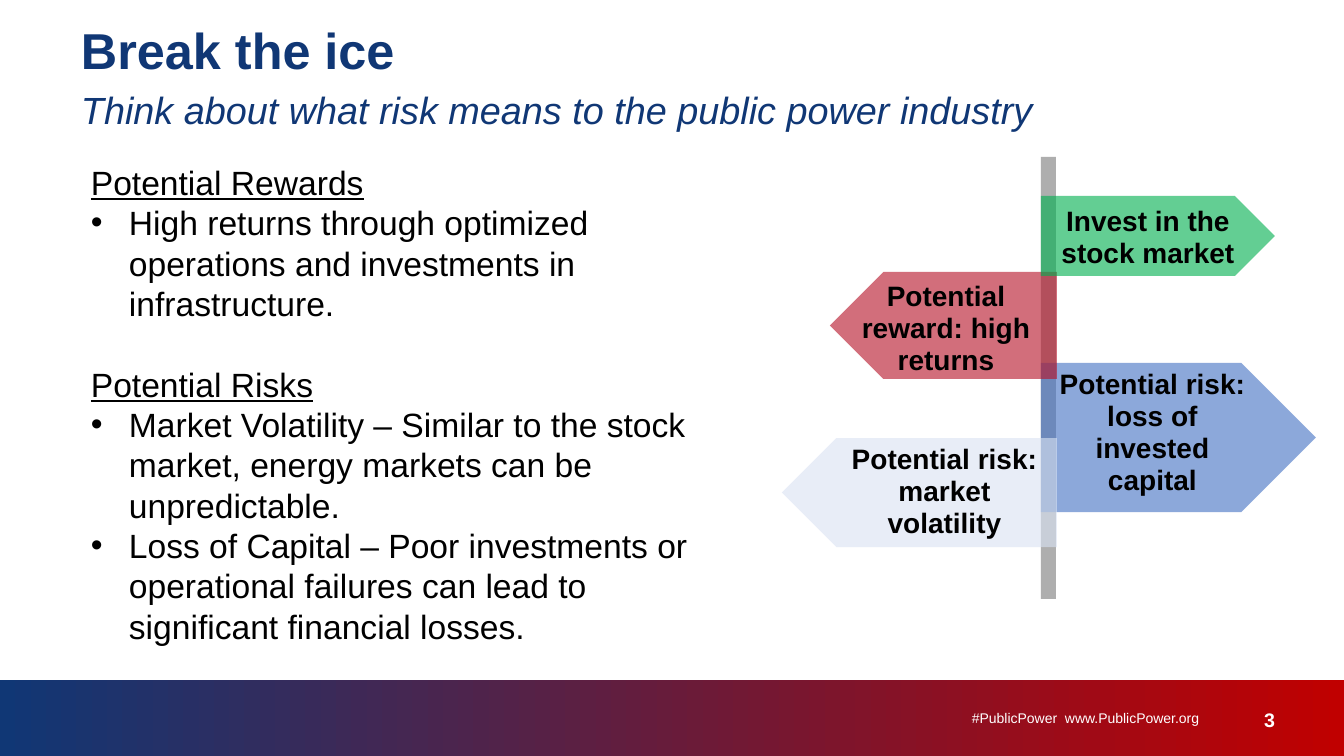
from lxml import etree
from pptx import Presentation
from pptx.dml.color import RGBColor
from pptx.enum.shapes import MSO_SHAPE
from pptx.enum.text import PP_ALIGN
from pptx.oxml.ns import qn
from pptx.util import Pt

RECT, PLATE = MSO_SHAPE.RECTANGLE, MSO_SHAPE.PENTAGON
LEFT, CENTER, RIGHT = PP_ALIGN.LEFT, PP_ALIGN.CENTER, PP_ALIGN.RIGHT

PX = 12192000 / 1344  # EMU in one px
THEME = {
    "font": "Arial",
    "navy": "103775", "red": "C00000", "white": "FFFFFF", "black": "000000",
    "pole": "7C7C7C", "blue_sign": "4472C4", "red_sign": "B71328",
    "pale_sign": "DAE3F3", "green_sign": "00B050", "sign_alpha": 61,
    "title": 36, "subtitle": 27, "body": 24, "sign": 20, "number": 14, "footer": 10,
}


def add_box(shapes, box, lines, align=LEFT, inset=True):
    """Add a text box; each line is a list of (text, size, colour, font flags)."""
    tf = shapes.add_textbox(*[round(v * PX) for v in box]).text_frame
    tf.word_wrap = True
    if not inset:
        tf.margin_left = tf.margin_right = tf.margin_top = tf.margin_bottom = 0
    for i, runs in enumerate(lines):
        p = tf.paragraphs[0] if i == 0 else tf.add_paragraph()
        p.alignment = align
        for j, (text, size, colour, flags) in enumerate(runs):
            if j:
                p.add_line_break()
            r = p.add_run()
            r.text = text
            r.font.color.rgb = RGBColor.from_string(THEME[colour])
            formats = {"name": THEME["font"], "size": Pt(THEME[size]), **flags}
            for name, value in formats.items():
                setattr(r.font, name, value)
    return tf


def add_panel(shapes, kind, box, colour):
    """Add a borderless, translucent shape."""
    sp = shapes.add_shape(kind, *[round(v * PX) for v in box])
    sp.shadow.inherit = False
    sp.line.fill.background()
    sp.fill.solid()
    sp.fill.fore_color.rgb = RGBColor.from_string(THEME[colour])
    clr = sp.fill._xPr.find(qn("a:solidFill"))[0]
    etree.SubElement(clr, qn("a:alpha"), val=str(THEME["sign_alpha"] * 1000))
    return sp


prs = Presentation()
prs.slide_width, prs.slide_height = round(1344 * PX), round(756 * PX)
s = prs.slides.add_slide(prs.slide_layouts[6])

# Footer band
band = s.shapes.add_shape(RECT, 0, round(680 * PX), prs.slide_width, round(78 * PX))
band.shadow.inherit = False
band.line.fill.background()
band.fill.gradient()
band.fill.gradient_angle = 0
for stop, colour in zip(band.fill.gradient_stops, ("navy", "red")):
    stop.color.rgb = RGBColor.from_string(THEME[colour])
add_box(s.shapes, (924, 710, 275, 17),
        [[("#PublicPower  www.PublicPower.org", "footer", "white", {})]], RIGHT, False)
add_box(s.shapes, (1222, 708, 53, 33), [[("3", "number", "white", {"bold": True})]], RIGHT, False)

# Title and subtitle
tf = add_box(s.shapes, (81, 26, 1185, 113), [[
    ("Break the ice", "title", "navy", {"bold": True}),
    ("Think about what risk means to the public power industry", "subtitle", "navy",
     {"italic": True}),
]], inset=False)
tf.paragraphs[0].line_spacing = Pt(38)

# Rewards and risks
SECTIONS = {
    "Potential Rewards": [
        "High returns through optimized operations and investments in infrastructure.",
    ],
    "Potential Risks": [
        "Market Volatility – Similar to the stock market, energy markets can be unpredictable.",
        "Loss of Capital – Poor investments or operational failures can lead to "
        "significant financial losses.",
    ],
}
lines = []
for heading, points in SECTIONS.items():
    lines.append([(heading, "body", "black", {"underline": True})])
    lines += [[(point, "body", "black", {})] for point in points]
tf = add_box(s.shapes, (81, 157, 652, 499), lines)
for i, p in enumerate(tf.paragraphs):
    if p.text not in SECTIONS:
        pPr = p._p.get_or_add_pPr()
        pPr.set("marL", str(round(38 * PX)))
        pPr.set("indent", str(round(-38 * PX)))
        etree.SubElement(pPr, qn("a:buFont"), typeface=THEME["font"])
        etree.SubElement(pPr, qn("a:buChar"), char="•")
    elif i:
        p.space_before = Pt(28.8)

# Signpost: plate box, colour, points left, label box, label
SIGNS = [
    ((1041, 363, 275, 149), "blue_sign", False, (1040, 364, 225, 139),
     "Potential risk: loss of invested capital"),
    ((830, 272, 227, 107), "red_sign", True, (851, 276, 190, 107),
     "Potential reward: high returns"),
    ((782, 438, 275, 109), "pale_sign", True, (834, 439, 221, 107),
     "Potential risk: market volatility"),
    ((1041, 196, 234, 80), "green_sign", False, (1040, 201, 216, 75),
     "Invest in the stock market"),
]
signpost = s.shapes.add_group_shape().shapes
add_panel(signpost, RECT, (1041, 157, 15, 442), "pole")
for plate_box, colour, points_left, label_box, label in SIGNS:
    plate = add_panel(signpost, PLATE, plate_box, colour)
    if points_left:
        plate._element.spPr.find(qn("a:xfrm")).set("flipH", "1")
    tf = add_box(signpost, label_box, [[(label, "sign", "black", {"bold": True})]], CENTER)
    tf.paragraphs[0].line_spacing = 0.95

prs.save("out.pptx")
